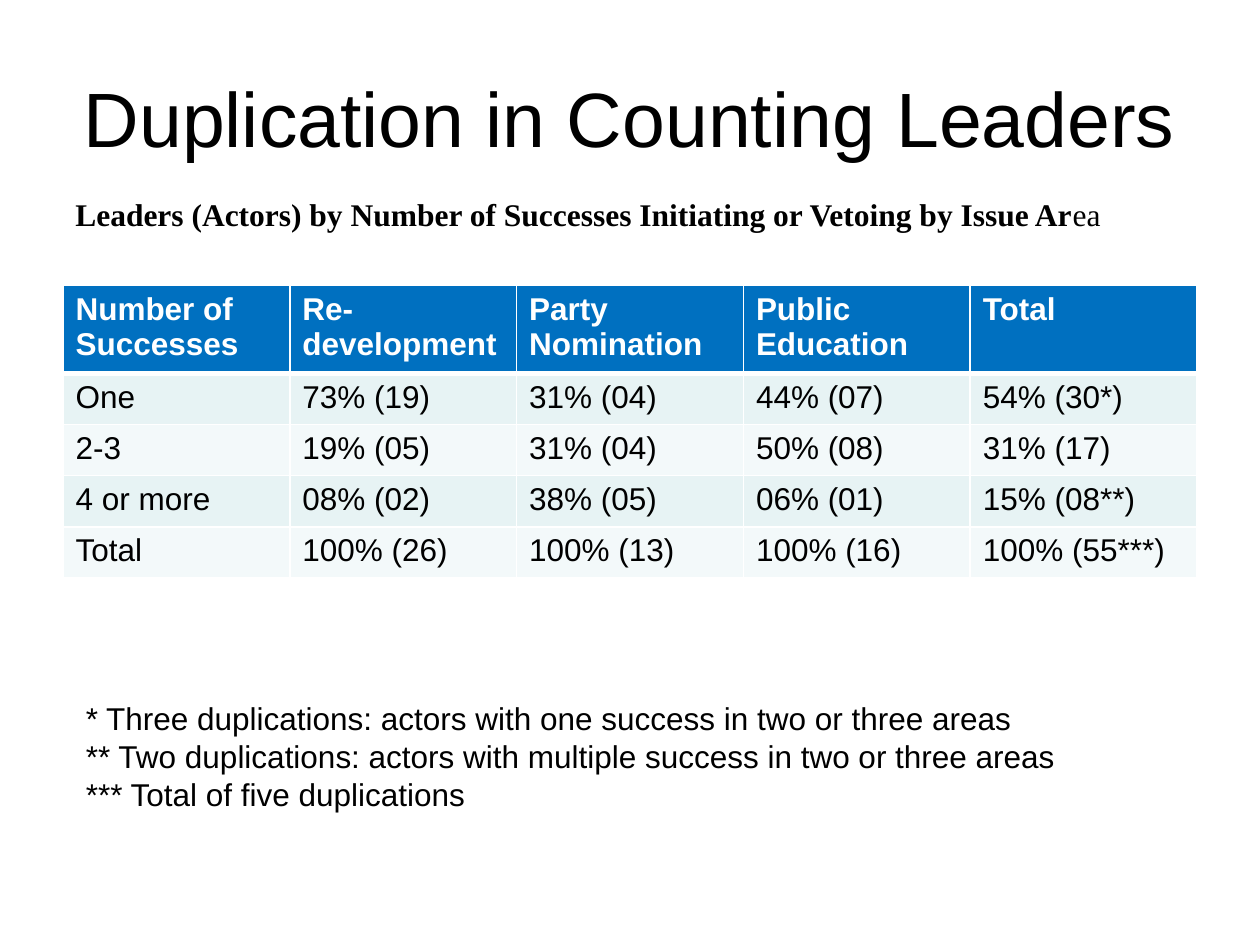
from lxml.etree import SubElement
from pptx import Presentation
from pptx.dml.color import RGBColor
from pptx.enum.text import MSO_ANCHOR, PP_ALIGN
from pptx.oxml.ns import qn
from pptx.util import Cm, Pt

TITLE = "Duplication in Counting Leaders"
SUBTITLE = [("Leaders (Actors) by Number of Successes Initiating or Vetoing by Issue Ar", True),
            ("ea", False)]
ROWS = [
    ["Number of Successes", "Re-development", "Party Nomination", "Public Education", "Total"],
    ["One", "73% (19)", "31% (04)", "44% (07)", "54% (30*)"],
    ["2-3", "19% (05)", "31% (04)", "50% (08)", "31% (17)"],
    ["4 or more", "08% (02)", "38% (05)", "06% (01)", "15% (08**)"],
    ["Total", "100% (26)", "100% (13)", "100% (16)", "100% (55***)"],
]
NOTES = [
    "* Three duplications: actors with one success in two or three areas",
    "** Two duplications: actors with multiple success in two or three areas",
    "*** Total of five duplications",
]


def rgb(value):
    return RGBColor.from_string(value)


class SlideBuilder:
    """Holds the style and the current slide, and adds elements to it."""

    font, serif, size = "Arial", "Times New Roman", 18
    text, white, header = "000000", "FFFFFF", "0070C0"
    bands = ("E7F3F4", "F3F9FA")

    def __init__(self, s):
        self.s = s

    def style(self, p, size=None, name=None, color=None, bold=None):
        p.font.size = Pt(size or self.size)
        p.font.name = name or self.font
        p.font.color.rgb = rgb(color or self.text)
        p.font.bold = bold

    def textbox(self, box, paragraphs, size=None, name=None, align=PP_ALIGN.LEFT,
                anchor=MSO_ANCHOR.TOP, wrap=True):
        tf = self.s.shapes.add_textbox(*map(Cm, box)).text_frame
        tf.word_wrap = wrap
        tf.vertical_anchor = anchor
        for i, runs in enumerate(paragraphs):
            p = tf.add_paragraph() if i else tf.paragraphs[0]
            p.alignment = align
            self.style(p, size, name)
            for text, bold in runs:
                r = p.add_run()
                r.text = text
                r.font.bold = bold

    def borders(self, cell, widths):
        tc_pr = cell._tc.get_or_add_tcPr()
        for side, width in zip("LRTB", widths):
            ln = SubElement(tc_pr, qn(f"a:ln{side}"), w=str(Pt(width)))
            fill = SubElement(ln, qn("a:solidFill"))
            SubElement(fill, qn("a:srgbClr"), val=self.white)

    def table(self, box, rows, heights):
        table = self.s.shapes.add_table(len(rows), len(rows[0]), *map(Cm, box)).table
        for i, (row, height) in enumerate(zip(rows, heights)):
            table.rows[i].height = Cm(height)
            head = i == 0
            for j, text in enumerate(row):
                cell = table.cell(i, j)
                cell.text = text
                self.style(cell.text_frame.paragraphs[0],
                           color=self.white if head else self.text, bold=head)
                self.borders(cell, (1, 1, 3 if i == 1 else 1, 3 if head else 1))
                cell.fill.solid()
                cell.fill.fore_color.rgb = rgb(self.header if head else self.bands[(i - 1) % 2])


def main():
    prs = Presentation()
    prs.slide_width, prs.slide_height = Cm(25.4), Cm(19.05)
    b = SlideBuilder(prs.slides.add_slide(prs.slide_layouts[6]))
    b.textbox((1.27, 0.76, 22.86, 3.18), [[(TITLE, False)]], size=44,
              align=PP_ALIGN.CENTER, anchor=MSO_ANCHOR.MIDDLE)
    b.table((1.27, 5.75, 22.86, 5.9), ROWS, [1.77] + [1.03] * 4)
    b.textbox((1.27, 3.81, 22.65, 1.03), [SUBTITLE], name=b.serif)
    b.textbox((1.48, 13.97, 20.25, 2.56), [[(note, False)] for note in NOTES], wrap=False)
    prs.save("out.pptx")


if __name__ == "__main__":
    main()
